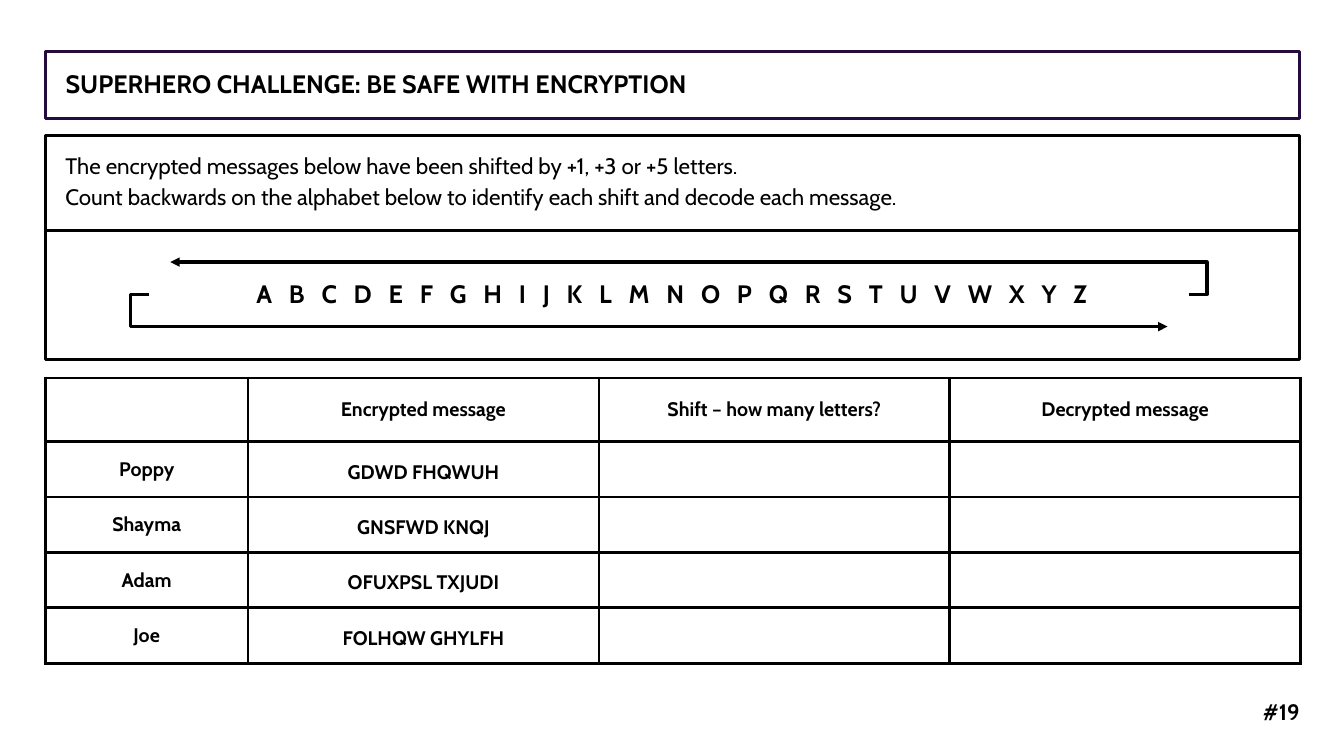
from dataclasses import dataclass

from lxml import etree
from pptx import Presentation
from pptx.dml.color import RGBColor
from pptx.enum.shapes import MSO_CONNECTOR, MSO_SHAPE
from pptx.enum.text import MSO_ANCHOR, MSO_AUTO_SIZE, PP_ALIGN
from pptx.oxml.ns import qn
from pptx.util import Inches, Pt

RECTANGLE = MSO_SHAPE.RECTANGLE
ELBOW = MSO_CONNECTOR.ELBOW
TOP, MIDDLE = MSO_ANCHOR.TOP, MSO_ANCHOR.MIDDLE
LEFT, CENTER, RIGHT = PP_ALIGN.LEFT, PP_ALIGN.CENTER, PP_ALIGN.RIGHT
NO_AUTOFIT = MSO_AUTO_SIZE.NONE

FONT = "Cabin"
BLACK, WHITE, PURPLE = "000000", "FFFFFF", "240C40"
LINE_WIDTH = Pt(2.25)
MARGIN, CONTENT_WIDTH = 0.45, 12.44
INSET = 0.2
BEND = 0.18  # how far each arrow reaches out before it turns back


@dataclass
class Panel:
    top: float
    height: float
    lines: list[str]
    size: float
    bold: bool = False
    align: PP_ALIGN = LEFT
    anchor: MSO_ANCHOR = TOP
    outline: str = BLACK
    letter_spacing: float = 0


@dataclass
class ShiftArrow:
    start: tuple[float, float]
    end: tuple[float, float]


TITLE = Panel(0.51, 0.67, ["SUPERHERO CHALLENGE: BE SAFE WITH ENCRYPTION"],
              18, bold=True, outline=PURPLE)
INSTRUCTIONS = Panel(1.34, 0.95, [
    "The encrypted messages below have been shifted by +1, +3 or +5 letters.",
    "Count backwards on the alphabet below to identify each shift and decode each message.",
], 16)
ALPHABET = Panel(2.29, 1.28, [" ".join("ABCDEFGHIJKLMNOPQRSTUVWXYZ")], 18,
                 bold=True, align=CENTER, anchor=MIDDLE, letter_spacing=4)
ARROWS = [
    ShiftArrow((1.48, 2.92), (11.58, 3.24)),
    ShiftArrow((11.79, 2.92), (1.69, 2.6)),
]
HEADINGS = ["", "Encrypted message", "Shift – how many letters?", "Decrypted message"]
MESSAGES = [
    ("Poppy", "GDWD FHQWUH"),
    ("Shayma", "GNSFWD KNQJ"),
    ("Adam", "OFUXPSL TXJUDI"),
    ("Joe", "FOLHQW GHYLFH"),
]
COLUMN_WIDTHS = [2.01] + [3.48] * 3
ROW_HEIGHTS = [0.63] + [0.55] * len(MESSAGES)


def color(value: str) -> RGBColor:
    return RGBColor.from_string(value)


def add_run(paragraph, text: str, size: float, bold: bool):
    run = paragraph.add_run()
    run.text = text
    run.font.name = FONT
    run.font.size = Pt(size)
    run.font.bold = bold
    run.font.color.rgb = color(BLACK)
    return run


def fill_panel(shape, panel: Panel) -> None:
    shape.left, shape.top = Inches(MARGIN), Inches(panel.top)
    shape.width, shape.height = Inches(CONTENT_WIDTH), Inches(panel.height)
    shape.fill.solid()
    shape.fill.fore_color.rgb = color(WHITE)
    shape.line.color.rgb = color(panel.outline)
    shape.line.width = LINE_WIDTH

    frame = shape.text_frame
    frame.auto_size = NO_AUTOFIT
    frame.word_wrap = True
    frame.vertical_anchor = panel.anchor
    frame.margin_left = frame.margin_right = Inches(INSET)
    frame.margin_top = frame.margin_bottom = Inches(INSET)
    for index, line in enumerate(panel.lines):
        paragraph = frame.add_paragraph() if index else frame.paragraphs[0]
        paragraph.alignment = panel.align
        paragraph.line_spacing = 0.9
        paragraph.space_before = Pt(5 if index else 0)
        run = add_run(paragraph, line, panel.size, panel.bold)
        if panel.letter_spacing:
            run.font._element.set("spc", str(round(panel.letter_spacing * 100)))


def add_panel(slide, panel: Panel) -> None:
    shape = slide.shapes.add_shape(RECTANGLE, 0, 0, 0, 0)
    shape.shadow.inherit = False
    fill_panel(shape, panel)


def add_shift_arrow(slide, arrow: ShiftArrow) -> None:
    points = [Inches(value) for value in (*arrow.start, *arrow.end)]
    connector = slide.shapes.add_connector(ELBOW, *points)
    connector.line.color.rgb = color(BLACK)
    connector.line.width = LINE_WIDTH
    properties = connector._element.spPr
    bend = -BEND / abs(arrow.end[0] - arrow.start[0])
    guides = properties.find(qn("a:prstGeom")).get_or_add_avLst()
    etree.SubElement(guides, qn("a:gd"), name="adj1", fmla=f"val {round(bend * 100000)}")
    etree.SubElement(properties.find(qn("a:ln")), qn("a:tailEnd"), type="triangle")
    etree.SubElement(properties, qn("a:effectLst"))


def add_borders(cell) -> None:
    properties = cell._tc.get_or_add_tcPr()
    for index, side in enumerate(("lnL", "lnR", "lnT", "lnB")):
        border = etree.Element(qn(f"a:{side}"), w=str(LINE_WIDTH))
        fill = etree.SubElement(border, qn("a:solidFill"))
        etree.SubElement(fill, qn("a:srgbClr"), val=BLACK)
        properties.insert(index, border)


def add_message_table(slide) -> None:
    rows = [HEADINGS] + [[name, message, "", ""] for name, message in MESSAGES]
    table = slide.shapes.add_table(
        len(rows), len(HEADINGS), Inches(MARGIN), Inches(3.75),
        Inches(CONTENT_WIDTH), Inches(sum(ROW_HEIGHTS))).table
    table.first_row = table.horz_banding = False
    for column, width in zip(table.columns, COLUMN_WIDTHS):
        column.width = Inches(width)
    for row, height in zip(table.rows, ROW_HEIGHTS):
        row.height = Inches(height)

    for row_index, row in enumerate(rows):
        for column_index, text in enumerate(row):
            cell = table.cell(row_index, column_index)
            is_answer = row_index > 0 and column_index > 0
            if is_answer:
                cell.fill.solid()
                cell.fill.fore_color.rgb = color(WHITE)
            else:
                cell.fill.background()
            add_borders(cell)
            if not text:
                continue
            cell.vertical_anchor = MIDDLE
            cell.margin_left = cell.margin_right = Inches(INSET)
            cell.margin_top = cell.margin_bottom = Inches(0.08)
            paragraph = cell.text_frame.paragraphs[0]
            paragraph.alignment = CENTER
            if is_answer:
                paragraph.line_spacing = Pt(21)
            add_run(paragraph, text, 14, True)


def add_page_number(slide) -> None:
    number = slide.shapes.add_textbox(Inches(12.01), Inches(6.87), Inches(0.88), Inches(0.37))
    frame = number.text_frame
    frame.word_wrap = True
    frame.vertical_anchor = MIDDLE
    frame.margin_left = frame.margin_right = frame.margin_top = frame.margin_bottom = 0
    frame.paragraphs[0].alignment = RIGHT
    add_run(frame.paragraphs[0], "#19", 16, True)


def main() -> None:
    presentation = Presentation()
    presentation.slide_width, presentation.slide_height = Inches(13.33), Inches(7.5)
    slide = presentation.slides.add_slide(presentation.slide_layouts[5])

    # Title and instructions
    fill_panel(slide.shapes.title, TITLE)
    add_panel(slide, INSTRUCTIONS)

    # Alphabet with its wrap-around arrows
    add_panel(slide, ALPHABET)
    for arrow in ARROWS:
        add_shift_arrow(slide, arrow)

    # Messages to decode and page number
    add_message_table(slide)
    add_page_number(slide)
    presentation.save("out.pptx")


if __name__ == "__main__":
    main()
